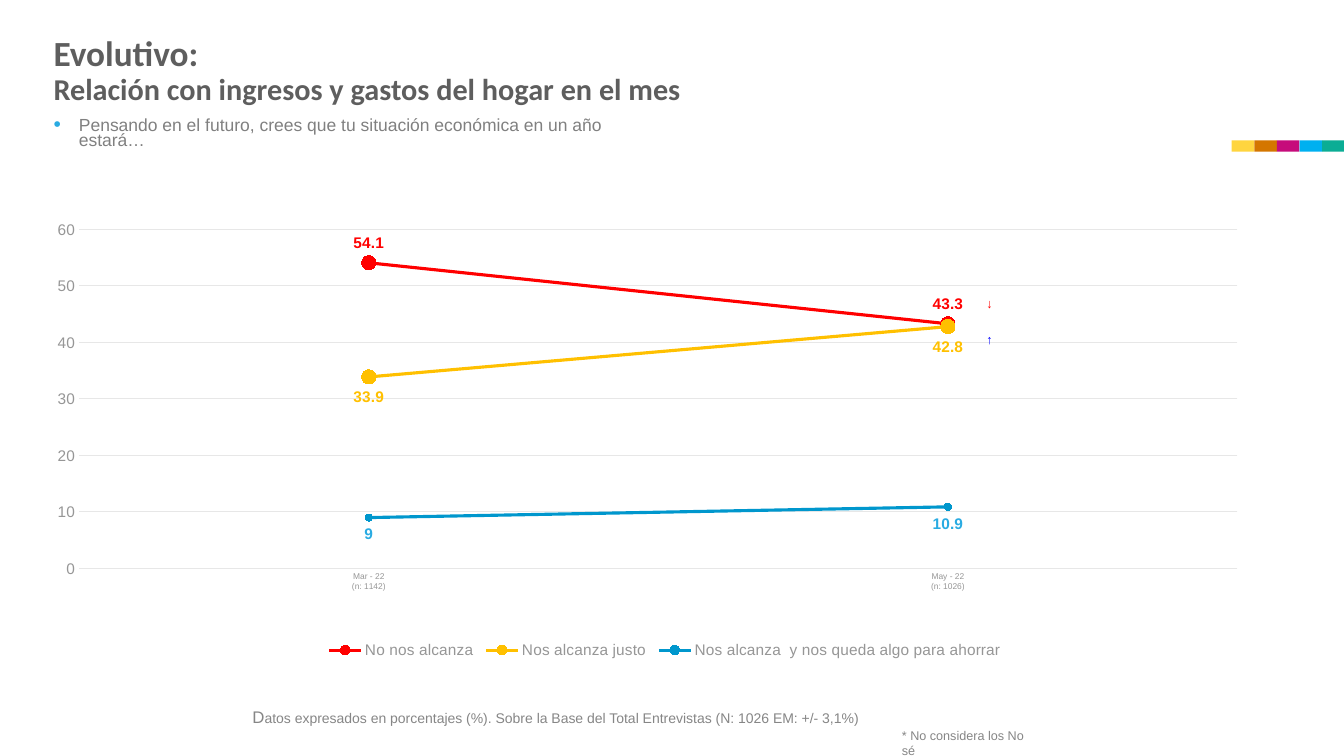
import lxml.etree
import pptx
import pptx.chart.data
import pptx.dml.color
import pptx.enum.chart
import pptx.enum.shapes
import pptx.enum.text
import pptx.oxml.ns
import pptx.util

Cm = pptx.util.Cm
Pt = pptx.util.Pt
ALIGN = pptx.enum.text.PP_ALIGN
ANCHOR = pptx.enum.text.MSO_ANCHOR
LABEL = pptx.enum.chart.XL_LABEL_POSITION

STRIP_COLORS = ["FFD53F", "D47600", "C60C7B", "00B0F0", "0BAD95"]
CATEGORIES = ["Mar - 22\n(n: 1142)", "May - 22\n(n: 1026)"]
SERIES = [
    ("No nos alcanza", (54.1, 43.3), "FF0000", "FF0000", 10, LABEL.ABOVE),
    ("Nos alcanza justo", (33.9, 42.8), "FFC000", "FFC000", 10, LABEL.BELOW),
    ("Nos alcanza  y nos queda algo para ahorrar", (9, 10.9), "0097CD", "29ABE2", 5, LABEL.BELOW),
]
CHANGE_MARKS = [(24.44, 6.27, "↓", "FF0000"), (24.44, 7.18, "↑", "0000FF"), (32.54, 10.64, "-", "FFFFFF")]
AXIS_TEXT = "969696"
GRID = "E7E7E7"
NOTE_TEXT = "868686"


def rgb(value):
    return pptx.dml.color.RGBColor.from_string(value)


def add_element(parent, tag, **attributes):
    element = lxml.etree.SubElement(parent, pptx.oxml.ns.qn(tag))
    for name, value in attributes.items():
        element.set(name, str(value))
    return element


def style_font(font, size, color, bold=False, name="Arial"):
    font.size = Pt(size)
    font.color.rgb = rgb(color)
    font.bold = bold
    font.name = name


def write(paragraph, text, align=ALIGN.LEFT, spacing=None, **font_format):
    paragraph.alignment = align
    if spacing:
        paragraph.line_spacing = spacing
    run = paragraph.add_run()
    run.text = text
    style_font(run.font, **font_format)


def add_text_box(slide, left, top, width, height, anchor=ANCHOR.TOP):
    shape = slide.shapes.add_textbox(Cm(left), Cm(top), Cm(width), Cm(height))
    shape.text_frame.word_wrap = True
    shape.text_frame.vertical_anchor = anchor
    return shape.text_frame.paragraphs[0]


def set_bullet(paragraph, character, color, percent, indent):
    properties = paragraph._p.get_or_add_pPr()
    properties.set("marL", str(Cm(indent)))
    properties.set("indent", str(-Cm(indent)))
    add_element(add_element(properties, "a:buClr"), "a:srgbClr", val=color)
    add_element(properties, "a:buSzPct", val=percent * 1000)
    add_element(properties, "a:buFont", typeface="Arial")
    add_element(properties, "a:buChar", char=character)


def add_color_strip(slide, left, top, width, height):
    group = slide.shapes.add_group_shape()
    for index, color in enumerate(STRIP_COLORS):
        shape = group.shapes.add_shape(
            pptx.enum.shapes.MSO_SHAPE.RECTANGLE,
            Cm(left + index * width), Cm(top), Cm(width), Cm(height))
        shape.shadow.inherit = False
        shape.fill.solid()
        shape.fill.fore_color.rgb = rgb(color)
        shape.line.fill.background()


def add_mark_table(slide, left, top, mark, color):
    table = slide.shapes.add_table(1, 1, Cm(left), Cm(top), Cm(0.99), Cm(2.79)).table
    table.first_row = False
    table.horz_banding = False
    cell = table.cell(0, 0)
    cell.margin_left = cell.margin_right = 0
    cell.vertical_anchor = ANCHOR.MIDDLE
    write(cell.text_frame.paragraphs[0], mark, align=ALIGN.CENTER, size=9, color=color, bold=True)
    properties = cell._tc.get_or_add_tcPr()
    for side in ("a:lnL", "a:lnR", "a:lnT", "a:lnB"):
        add_element(add_element(properties, side, w=0), "a:noFill")
    cell.fill.background()


def set_layout(parent, position, left, top, width, height, target=None):
    for old_layout in parent.findall(pptx.oxml.ns.qn("c:layout")):
        parent.remove(old_layout)
    layout = add_element(parent, "c:layout")
    parent.insert(position, layout)
    manual = add_element(layout, "c:manualLayout")
    if target:
        add_element(manual, "c:layoutTarget", val=target)
    add_element(manual, "c:xMode", val="edge")
    add_element(manual, "c:yMode", val="edge")
    for tag, value in (("c:x", left), ("c:y", top), ("c:w", width), ("c:h", height)):
        add_element(manual, tag, val=value)


def style_line(line, color, width):
    line.color.rgb = rgb(color)
    line.width = Pt(width)


def style_axes(chart):
    for axis, size in ((chart.category_axis, 6), (chart.value_axis, 11)):
        axis.major_tick_mark = pptx.enum.chart.XL_TICK_MARK.NONE
        axis.minor_tick_mark = pptx.enum.chart.XL_TICK_MARK.NONE
        style_font(axis.tick_labels.font, size, AXIS_TEXT)
    style_line(chart.category_axis.format.line, GRID, 0.75)
    value_axis = chart.value_axis
    value_axis.minimum_scale = 0
    value_axis.maximum_scale = 60
    value_axis.major_unit = 10
    value_axis.format.line.fill.background()
    style_line(value_axis.major_gridlines.format.line, GRID, 0.75)


def style_series(series, color, label_color, marker_size, position):
    series.smooth = False
    style_line(series.format.line, color, 2.25)
    marker = series.marker
    marker.style = pptx.enum.chart.XL_MARKER_STYLE.CIRCLE
    marker.size = marker_size
    marker.format.fill.solid()
    marker.format.fill.fore_color.rgb = rgb(color)
    marker.format.line.color.rgb = rgb(color)
    labels = series.data_labels
    labels.show_value = True
    labels.position = position
    style_font(labels.font, 11, label_color, bold=True)


def add_line_chart(slide, left, top, width, height):
    chart_data = pptx.chart.data.CategoryChartData()
    chart_data.categories = CATEGORIES
    for name, values, *_ in SERIES:
        chart_data.add_series(name, values)
    chart = slide.shapes.add_chart(
        pptx.enum.chart.XL_CHART_TYPE.LINE_MARKERS,
        Cm(left), Cm(top), Cm(width), Cm(height), chart_data).chart
    chart.has_title = False
    style_font(chart.font, 11, "5E5E5E")
    chart.plots[0].vary_by_categories = False
    chart.has_legend = True
    chart.legend.position = pptx.enum.chart.XL_LEGEND_POSITION.BOTTOM
    chart.legend.include_in_layout = False
    style_font(chart.legend.font, 11, AXIS_TEXT)
    style_axes(chart)
    chart_element = chart._chartSpace.chart
    set_layout(chart_element.plotArea, 0, 0.064, 0.104, 0.936, 0.698, target="inner")
    set_layout(chart_element.find(pptx.oxml.ns.qn("c:legend")), 1, 0.26, 0.94, 0.555, 0.06)
    for series, (_, _, *series_format) in zip(chart.plots[0].series, SERIES):
        style_series(series, *series_format)


def main():
    presentation = pptx.Presentation()
    presentation.slide_width = Cm(33.87)
    presentation.slide_height = Cm(19.05)
    slide = presentation.slides.add_slide(presentation.slide_layouts[6])

    add_color_strip(slide, 31.04, 3.54, 0.57, 0.28)

    title = add_text_box(slide, 1.1, 0.79, 27.41, 1.32)
    title_format = {"color": "5E5E5E", "bold": True, "name": "Calibri", "spacing": 0.9}
    write(title, "Evolutivo:", size=25.2, **title_format)
    title.add_line_break()
    write(title, "Relación con ingresos y gastos del hogar en el mes", size=21.6, **title_format)

    question = add_text_box(slide, 1.1, 2.9, 15.6, 0.79)
    set_bullet(question, "•", "29ABE2", 120, 0.64)
    write(question, "Pensando en el futuro, crees que tu situación económica en un año estará…",
          size=12.5, color="808080", spacing=0.7)

    add_line_chart(slide, 0, 4.51, 31.2, 12.24)

    footnote = add_text_box(slide, 22.48, 18.21, 3.71, 0.64)
    write(footnote, "* No considera los No sé", size=9, color=NOTE_TEXT)

    for left, top, mark, color in CHANGE_MARKS:
        add_mark_table(slide, left, top, mark, color)

    base = add_text_box(slide, 2.07, 17.68, 19.81, 0.79, anchor=ANCHOR.MIDDLE)
    write(base, "D", align=ALIGN.RIGHT, size=12, color=NOTE_TEXT)
    write(base, "atos expresados en porcentajes (%). Sobre la Base del Total Entrevistas "
          "(N: 1026 EM: +/- 3,1%)", align=ALIGN.RIGHT, size=10, color=NOTE_TEXT)

    presentation.save("out.pptx")


if __name__ == "__main__":
    main()
